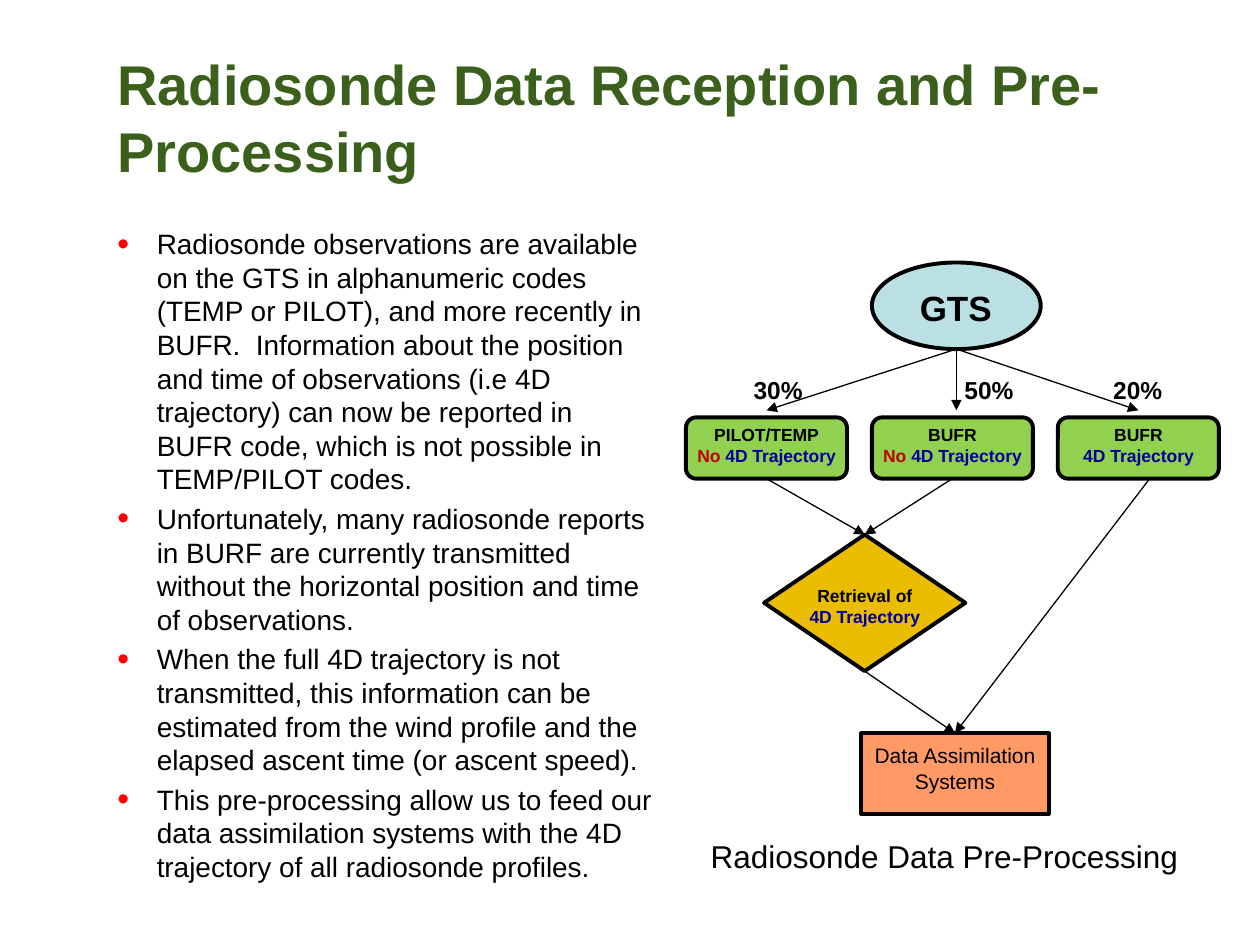
from lxml import etree
from pptx import Presentation
from pptx.dml.color import RGBColor
from pptx.enum.shapes import MSO_CONNECTOR, MSO_SHAPE
from pptx.enum.text import MSO_ANCHOR, PP_ALIGN
from pptx.oxml.ns import qn
from pptx.util import Pt

STRAIGHT = MSO_CONNECTOR.STRAIGHT
ELLIPSE, DIAMOND = MSO_SHAPE.OVAL, MSO_SHAPE.DIAMOND
RECTANGLE, ROUNDED = MSO_SHAPE.RECTANGLE, MSO_SHAPE.ROUNDED_RECTANGLE
LEFT, CENTER = PP_ALIGN.LEFT, PP_ALIGN.CENTER
TOP, MIDDLE = MSO_ANCHOR.TOP, MSO_ANCHOR.MIDDLE
SIDE_TOP, SIDE_BOTTOM = 0, 2

FONT = "Arial"
COLORS = {
    "title": "3A601B", "text": "000000", "bullet": "FF0000",
    "missing": "C00000", "trajectory": "000099",
    "source": "BBE0E3", "report": "92D050",
    "retrieval": "EABD00", "assimilation": "FF9966",
}
TITLE = "Radiosonde Data Reception and Pre-Processing"
BULLETS = [
    "Radiosonde observations are available on the GTS in alphanumeric codes "
    "(TEMP or PILOT), and more recently in BUFR.  Information about the position "
    "and time of observations (i.e 4D trajectory) can now be reported in BUFR "
    "code, which is not possible in TEMP/PILOT codes.",
    "Unfortunately, many radiosonde reports in BURF are currently transmitted "
    "without the horizontal position and time of observations.",
    "When the full 4D trajectory is not transmitted, this information can be "
    "estimated from the wind profile and the elapsed ascent time (or ascent speed).",
    "This pre-processing allow us to feed our data assimilation systems with the "
    "4D trajectory of all radiosonde profiles.",
]
TRAJECTORY = [("4D Trajectory", "trajectory")]
NO_TRAJECTORY = [("No ", "missing")] + TRAJECTORY
# Report type, trajectory line, share of reports, left of the share label
REPORTS = [
    ("PILOT/TEMP", NO_TRAJECTORY, "30%", 423.5),
    ("BUFR", NO_TRAJECTORY, "50%", 544),
    ("BUFR", TRAJECTORY, "20%", 629),
]


def rgb(name):
    return RGBColor.from_string(COLORS[name])


def set_bullet(paragraph, indent=22.5):
    properties = paragraph._p.get_or_add_pPr()
    properties.set("marL", str(Pt(indent)))
    properties.set("indent", str(Pt(-indent)))
    color = etree.SubElement(properties, qn("a:buClr"))
    etree.SubElement(color, qn("a:srgbClr"), val=COLORS["bullet"])
    etree.SubElement(properties, qn("a:buSzPct"), val="120000")
    etree.SubElement(properties, qn("a:buFont"), typeface=FONT)
    etree.SubElement(properties, qn("a:buChar"), char="•")


def add_text(slide, box, lines, size=10, color="text", bold=False, align=LEFT,
             anchor=TOP, wrap=False, bullets=False, gap=0):
    """Each line is a string or a list of (text, color) runs."""
    frame = slide.shapes.add_textbox(*map(Pt, box)).text_frame
    frame.word_wrap = wrap
    frame.vertical_anchor = anchor
    for index, line in enumerate(lines):
        paragraph = frame.paragraphs[0] if index == 0 else frame.add_paragraph()
        if bullets:
            set_bullet(paragraph)
        paragraph.alignment = align
        if index and gap:
            paragraph.space_before = Pt(gap)
        for text, run_color in [(line, color)] if isinstance(line, str) else line:
            run = paragraph.add_run()
            run.text = text
            run.font.name = FONT
            run.font.size = Pt(size)
            run.font.bold = bold
            run.font.color.rgb = rgb(run_color)


def add_node(slide, kind, box, fill):
    shape = slide.shapes.add_shape(kind, *map(Pt, box))
    shape.shadow.inherit = False
    shape.fill.solid()
    shape.fill.fore_color.rgb = rgb(fill)
    shape.line.color.rgb = rgb("text")
    shape.line.width = Pt(2.25)
    return shape


def add_arrow(slide, start, end, source=None, target=None):
    """Draw an arrow, joined to the source's bottom and the target's top if given."""
    connector = slide.shapes.add_connector(STRAIGHT, *map(Pt, start + end))
    if source is not None:
        connector.begin_connect(source, SIDE_BOTTOM)
    if target is not None:
        connector.end_connect(target, SIDE_TOP)
    connector.line.color.rgb = rgb("text")
    connector.line.width = Pt(0.75)
    line = connector.line._get_or_add_ln()
    etree.SubElement(line, qn("a:tailEnd"), type="triangle")
    etree.SubElement(connector._element.spPr, qn("a:effectLst"))


def add_title(slide, box):
    add_text(slide, box, [TITLE], size=32, color="title", bold=True,
             anchor=MIDDLE, wrap=True)


def add_body(slide, box):
    add_text(slide, box, BULLETS, size=16, wrap=True, bullets=True, gap=3.5)


def add_flowchart(slide, box):
    left, top, width, height = box
    report_width, report_height = 92, 35
    step = (width - report_width) / (len(REPORTS) - 1)
    report_top = top + 88.5
    report_bottom = report_top + report_height

    # Data source
    source_x, source_bottom = left + 154.5, top + 49.5
    add_node(slide, ELLIPSE, (source_x - 48.25, top, 96.5, 49.5), "source")
    add_text(slide, (source_x - 28, top + 10, 72, 31.5), ["GTS"], size=20, bold=True)

    # Report types with their shares
    reports, centers = [], []
    for index, (name, trajectory, share, share_left) in enumerate(REPORTS):
        report_left = left + index * step
        center = report_left + report_width / 2
        reports.append(add_node(
            slide, ROUNDED, (report_left, report_top, report_width, report_height),
            "report"))
        centers.append(center)
        add_text(slide, (center - 47.5, report_top, 95, 31.5), [name, trajectory],
                 bold=True, align=CENTER)
        add_text(slide, (share_left, top + 60.5, 42.5, 24.5), [share],
                 size=14, bold=True)
        tip_x = source_x if index == 1 else center
        add_arrow(slide, (source_x, source_bottom), (tip_x, report_top - 4))

    # Trajectory retrieval
    retrieval_x, retrieval_top = (centers[0] + centers[1]) / 2 + 3, top + 155.5
    retrieval_bottom = retrieval_top + 78
    retrieval = add_node(
        slide, DIAMOND, (retrieval_x - 57.5, retrieval_top, 115, 78), "retrieval")
    add_text(slide, (retrieval_x - 39.5, retrieval_top + 25, 79, 31.5),
             ["Retrieval of", TRAJECTORY], bold=True, align=CENTER)
    for report, center in zip(reports[:2], centers):
        add_arrow(slide, (center, report_bottom), (retrieval_x, retrieval_top),
                  report, retrieval)

    # Data assimilation
    system_x, system_top = source_x - 0.75, top + 269
    system = add_node(
        slide, RECTANGLE, (system_x - 53.5, system_top, 107, 46), "assimilation")
    add_text(slide, (system_x - 53.5, system_top + 2, 107, 36),
             ["Data Assimilation", "Systems"], size=12, align=CENTER)
    add_arrow(slide, (retrieval_x, retrieval_bottom), (system_x, system_top),
              retrieval, system)
    add_arrow(slide, (centers[2] + 6.5, report_bottom), (system_x, system_top),
              target=system)

    # Caption
    add_text(slide, (left + 7, top + height - 29, 284.5, 29),
             ["Radiosonde Data Pre-Processing"], size=18)


def main():
    presentation = Presentation()
    presentation.slide_width, presentation.slide_height = Pt(720), Pt(540)
    slide = presentation.slides.add_slide(presentation.slide_layouts[6])
    add_title(slide, (60, 21.5, 642, 90))
    add_body(slide, (60, 126, 321, 406))
    add_flowchart(slide, (392, 150, 304.5, 354))
    presentation.save("out.pptx")


if __name__ == "__main__":
    main()
